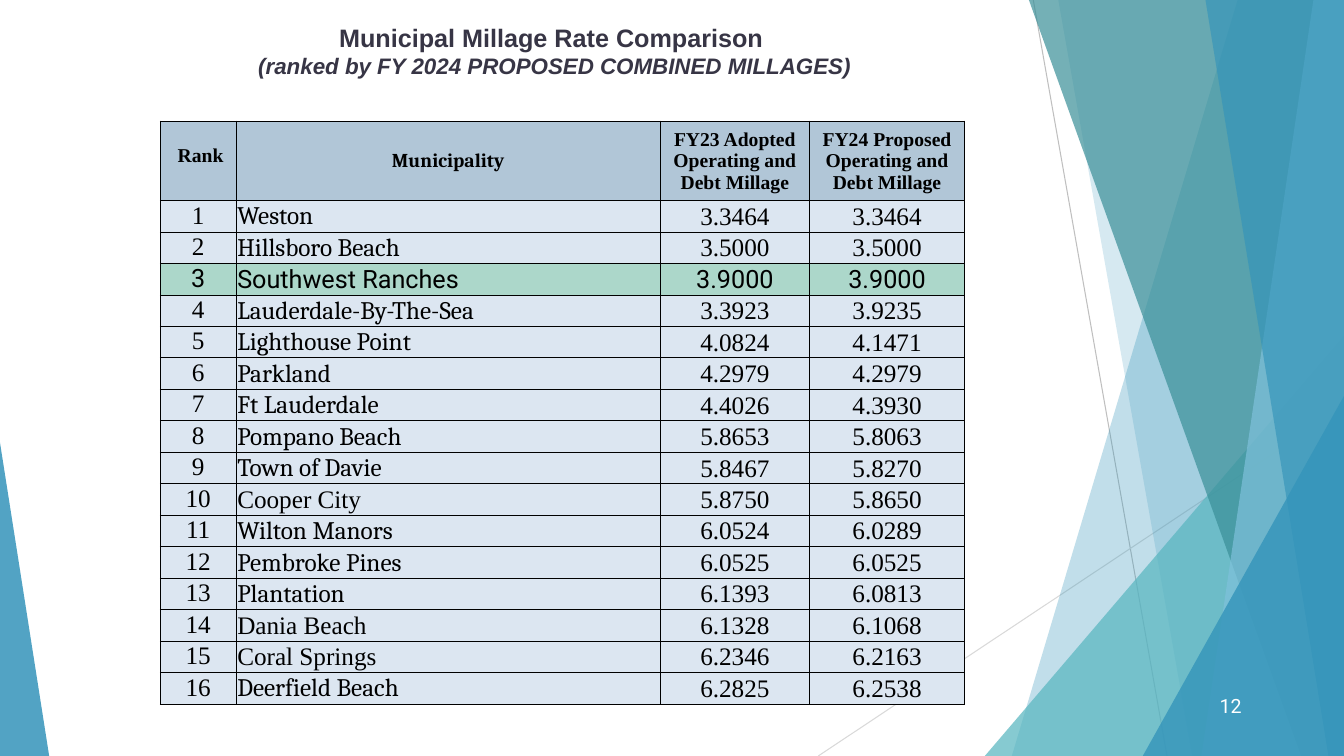
import pptx
import pptx.dml.color
import pptx.enum.shapes
import pptx.enum.text
import pptx.oxml
import pptx.oxml.ns
import pptx.util
from pptx.util import Cm, Pt

TITLE = [
    # text, size name, italic
    ("Municipal Millage Rate Comparison ", "title", False),
    ("(ranked by FY 2024 PROPOSED COMBINED MILLAGES)", "subtitle", True),
]
PAGE_NUMBER = "12"
HEADERS = [
    " Rank",
    "Municipality",
    "FY23 Adopted Operating and Debt Millage",
    "FY24 Proposed Operating and Debt Millage",
]
MILLAGES = [
    ("Weston", "3.3464", "3.3464"),
    ("Hillsboro Beach", "3.5000", "3.5000"),
    ("Southwest Ranches", "3.9000", "3.9000"),
    ("Lauderdale-By-The-Sea", "3.3923", "3.9235"),
    ("Lighthouse Point", "4.0824", "4.1471"),
    ("Parkland", "4.2979", "4.2979"),
    ("Ft Lauderdale", "4.4026", "4.3930"),
    ("Pompano Beach", "5.8653", "5.8063"),
    ("Town of Davie", "5.8467", "5.8270"),
    ("Cooper City", "5.8750", "5.8650"),
    ("Wilton Manors", "6.0524", "6.0289"),
    ("Pembroke Pines", "6.0525", "6.0525"),
    ("Plantation", "6.1393", "6.0813"),
    ("Dania Beach", "6.1328", "6.1068"),
    ("Coral Springs", "6.2346", "6.2163"),
    ("Deerfield Beach", "6.2825", "6.2538"),
]
HIGHLIGHTED = "Southwest Ranches"
TIMES_NAMES = {"Cooper City", "Dania Beach", "Coral Springs"}

THEME = {
    "color": {
        "title": "373545", "text": "000000", "page": "FFFFFF", "border": "000000",
        "header": "B1C6D7", "row": "DCE6F1", "highlight": "ACD7CA",
        "blue": "3494BA", "aqua": "58B6C0", "teal": "3A8F98", "sky": "7FC1DB",
        "line": "BFBFBF", "pale line": "D9D9D9",
    },
    "size": {"title": 18, "subtitle": 16, "header": 14, "row": 18, "page": 14},
    "font": {"title": "Arial", "name": "Cambria", "number": "Times New Roman",
             "accent": "Roboto"},
}

# Lengths in centimetres
SLIDE_W, SLIDE_H = 33.87, 19.05
BACK_LINES = [
    ((26.04, 0), (29.41, SLIDE_H), "line"),
    ((SLIDE_W, 10.24), (20.62, SLIDE_H), "pale line"),
]
FACETS = [
    # outline, colour, opacity in percent
    # band: x at top, x at bottom; wedge: left, top, width, apex
    ("band", (31.19, 25.5), "blue", 30),
    ("band", (26.67, 30.05), "blue", 20),
    ("wedge", (24.82, 8.46, 9.05, 1), "aqua", 72),
    ("band", (25.93, 32.79), "teal", 70),
    ("band", (33.1, 30.28), "sky", 70),
    ("band", (30.38, 33.48), "blue", 65),
    ("wedge", (28.8, 9.98, 5.07, 1), "blue", 80),
    ("wedge", (0, 11.15, 1.24, 0), "blue", 85),
]
TABLE_LEFT, TABLE_TOP = 4.04, 3.05
COLUMN_W = [1.91, 10.69, 3.76, 3.91]
HEADER_H, ROW_H = 2.0, 0.79
CELL_MARGIN, RANK_HEADER_TOP = 0.03, 0.6

ALIGN = pptx.enum.text.PP_ALIGN
ANCHOR = pptx.enum.text.MSO_ANCHOR
SHAPE = pptx.enum.shapes.MSO_SHAPE


def rgb(name):
    return pptx.dml.color.RGBColor.from_string(THEME["color"][name])


def add_run(p, text, font, size, color, bold=False, italic=False):
    r = p.add_run()
    r.text = text
    r.font.name = THEME["font"][font]
    r.font.size = Pt(THEME["size"][size])
    r.font.color.rgb = rgb(color)
    r.font.bold, r.font.italic = bold, italic


def add_text_frame(s, left, top, width, height):
    tf = s.shapes.add_textbox(Cm(left), Cm(top), Cm(width), Cm(height)).text_frame
    tf.word_wrap = True
    return tf


def add_back_line(s, start, end, color):
    line = s.shapes.add_connector(
        pptx.enum.shapes.MSO_CONNECTOR.STRAIGHT, *(Cm(v) for v in start + end))
    line.line.color.rgb = rgb(color)
    line.line.width = Pt(0.75)
    pptx.oxml.ns.qn("a:effectLst")
    line._element.spPr.append(
        pptx.oxml.parse_xml(f"<a:effectLst {pptx.oxml.ns.nsdecls('a')}/>"))


def add_facet(s, outline, geometry, color, opacity):
    """Add a translucent band reaching the right edge, or a wedge standing on the bottom."""
    if outline == "band":
        top_x, bottom_x = geometry
        builder = s.shapes.build_freeform(Cm(top_x), 0)
        corners = [(SLIDE_W, 0), (SLIDE_W, SLIDE_H), (bottom_x, SLIDE_H)]
        builder.add_line_segments([(Cm(x), Cm(y)) for x, y in corners], close=True)
        sp = builder.convert_to_shape()
    else:
        left, top, width, apex = geometry
        sp = s.shapes.add_shape(SHAPE.ISOSCELES_TRIANGLE, Cm(left), Cm(top),
                                Cm(width), Cm(SLIDE_H - top))
        sp.adjustments[0] = apex
    sp.shadow.inherit = False
    sp.line.fill.background()
    sp.fill.solid()
    sp.fill.fore_color.rgb = rgb(color)
    srgb = sp._element.spPr.find(".//" + pptx.oxml.ns.qn("a:srgbClr"))
    srgb.append(pptx.oxml.parse_xml(
        f"<a:alpha {pptx.oxml.ns.nsdecls('a')} val='{opacity * 1000}'/>"))


def add_borders(cell):
    tc_pr = cell._tc.get_or_add_tcPr()
    for i, side in enumerate("LRTB"):
        tc_pr.insert(i, pptx.oxml.parse_xml(
            f"<a:ln{side} {pptx.oxml.ns.nsdecls('a')} w='{Pt(0.5)}'><a:solidFill>"
            f"<a:srgbClr val='{THEME['color']['border']}'/></a:solidFill></a:ln{side}>"))


def fill_cell(cell, text, column, font, kind):
    is_header = kind == "header"
    cell.margin_left = cell.margin_right = cell.margin_top = Cm(CELL_MARGIN)
    cell.margin_bottom = 0
    cell.vertical_anchor = ANCHOR.TOP if column == 0 else ANCHOR.MIDDLE
    if is_header and column == 0:
        cell.margin_top = Cm(RANK_HEADER_TOP)
    cell.fill.solid()
    cell.fill.fore_color.rgb = rgb(kind)
    add_borders(cell)
    p = cell.text_frame.paragraphs[0]
    p.alignment = ALIGN.LEFT if column == 1 and not is_header else ALIGN.CENTER
    add_run(p, text, font, "header" if is_header else "row", "text", bold=is_header)


def add_millage_table(s):
    rows = [HEADERS] + [(str(rank), *m) for rank, m in enumerate(MILLAGES, 1)]
    heights = [HEADER_H] + [ROW_H] * len(MILLAGES)
    table = s.shapes.add_table(len(rows), len(HEADERS), Cm(TABLE_LEFT), Cm(TABLE_TOP),
                               Cm(sum(COLUMN_W)), Cm(sum(heights))).table
    table.first_row = table.horz_banding = False
    for column, width in zip(table.columns, COLUMN_W):
        column.width = Cm(width)
    for i, (row, height) in enumerate(zip(rows, heights)):
        table.rows[i].height = Cm(height)
        name = row[1]
        kind = "header" if i == 0 else "highlight" if name == HIGHLIGHTED else "row"
        for j, text in enumerate(row):
            font = "name" if j == 1 and name not in TIMES_NAMES else "number"
            if kind == "highlight":
                font = "accent"
            fill_cell(table.cell(i, j), text, j, font, kind)


def main():
    prs = pptx.Presentation()
    prs.slide_width, prs.slide_height = Cm(SLIDE_W), Cm(SLIDE_H)
    s = prs.slides.add_slide(prs.slide_layouts[6])
    for back_line in BACK_LINES:
        add_back_line(s, *back_line)
    for facet in FACETS:
        add_facet(s, *facet)

    tf = add_text_frame(s, 3.2, 0.43, 21.56, 1.7)
    for i, (text, size, italic) in enumerate(TITLE):
        p = tf.add_paragraph() if i else tf.paragraphs[0]
        p.alignment = ALIGN.CENTER
        add_run(p, text, "title", size, "title", bold=True, italic=italic)

    tf = add_text_frame(s, 29.64, 17.27, 1.9, 1.02)
    tf.vertical_anchor = ANCHOR.MIDDLE
    p = tf.paragraphs[0]
    p.alignment = ALIGN.RIGHT
    add_run(p, PAGE_NUMBER, "accent", "page", "page")

    add_millage_table(s)
    prs.save("out.pptx")


if __name__ == "__main__":
    main()
